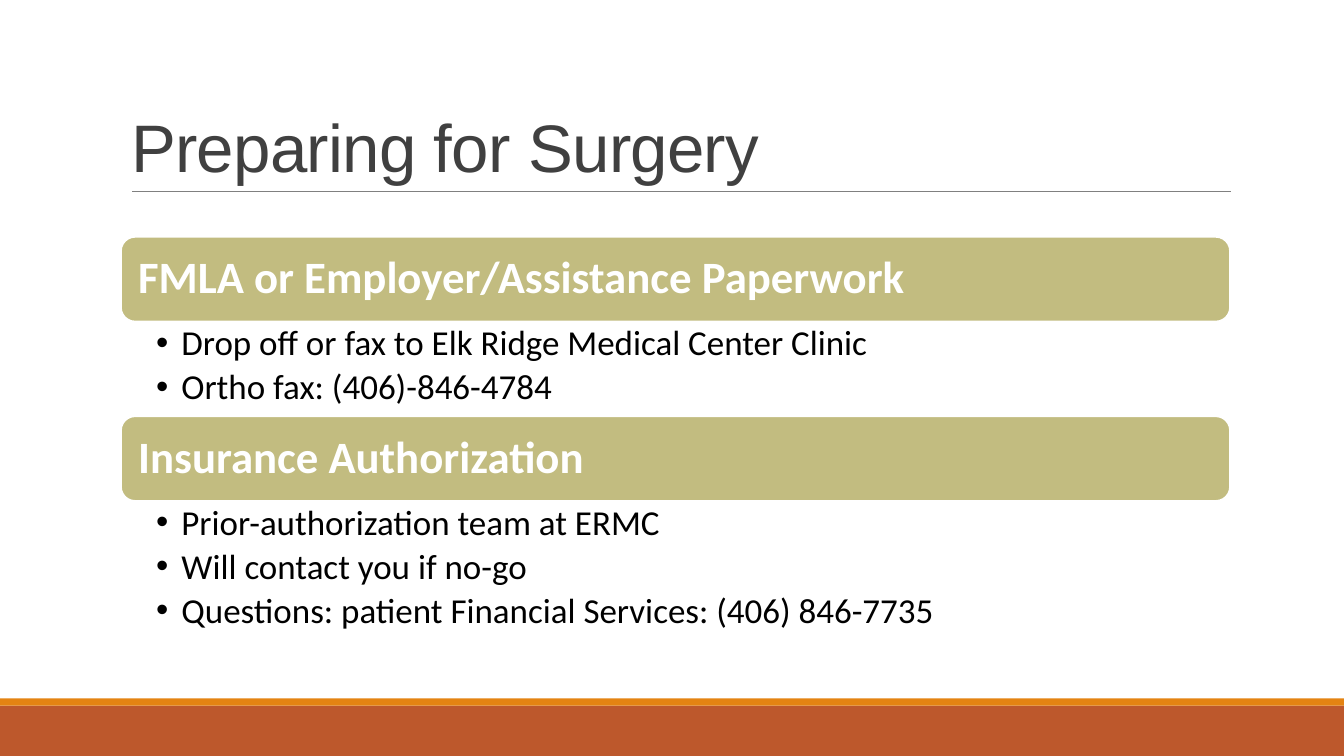
from dataclasses import dataclass
from lxml.etree import SubElement
from pptx import Presentation
from pptx.dml.color import RGBColor
from pptx.enum.shapes import MSO_CONNECTOR, MSO_SHAPE
from pptx.enum.text import MSO_ANCHOR, MSO_AUTO_SIZE, PP_ALIGN
from pptx.oxml.ns import qn
from pptx.util import Inches, Pt


@dataclass(frozen=True)
class Theme:
    rust: str = "BD582C"
    amber: str = "E48312"
    gray: str = "808080"
    ink: str = "404040"
    sand: str = "C2BC80"
    white: str = "FFFFFF"
    black: str = "000000"
    head: str = "Arial"
    body: str = "Calibri"
    big: int = 48
    mid: int = 32
    small: int = 25


THEME = Theme()
LEFT, WIDTH = 1.2, 11
BAR, ROW = 0.84, 0.47  # heights of a heading bar and a bullet row

TOPICS = [
    ("FMLA or Employer/Assistance Paperwork", [
        "Drop off or fax to Elk Ridge Medical Center Clinic",
        "Ortho fax: (406)-846-4784"]),
    ("Insurance Authorization", [
        "Prior-authorization team at ERMC",
        "Will contact you if no-go",
        "Questions: patient Financial Services: (406) 846-7735"]),
]


def apply(item, values):
    for name, value in values.items():
        setattr(item, name, value)


def style(para, name, size, color, bold=False):
    apply(para.font, {"name": name, "size": Pt(size), "bold": bold})
    para.font.color.rgb = RGBColor.from_string(color)


def setup(frame, anchor, insets):
    sides = ("margin_left", "margin_top", "margin_right", "margin_bottom")
    apply(frame, {"word_wrap": True, "auto_size": MSO_AUTO_SIZE.NONE,
                  "vertical_anchor": anchor})
    apply(frame, dict(zip(sides, map(Inches, insets))))


def block(slide, kind, box, fill, edge=None):
    shape = slide.shapes.add_shape(kind, *map(Inches, box))
    shape.shadow.inherit = False
    shape.fill.solid()
    shape.fill.fore_color.rgb = RGBColor.from_string(fill)
    if edge:
        shape.line.color.rgb = RGBColor.from_string(edge)
        shape.line.width = Pt(1.25)
    else:
        shape.line.fill.background()
    return shape


def rule(slide, left, right, top):
    line = slide.shapes.add_connector(
        MSO_CONNECTOR.STRAIGHT, *map(Inches, (left, top, right, top)))
    line.line.color.rgb = RGBColor.from_string(THEME.gray)
    line.line.width = Pt(0.5)
    SubElement(line.element.spPr, qn("a:effectLst"))


def title(slide, text):
    shape = slide.shapes.title
    places = ("left", "top", "width", "height")
    apply(shape, dict(zip(places, map(Inches, (LEFT, 0.31, WIDTH, 1.59)))))
    setup(shape.text_frame, MSO_ANCHOR.BOTTOM, (0.1, 0.05, 0.1, 0.05))
    para = shape.text_frame.paragraphs[0]
    run = para.add_run()
    run.text = text
    apply(para, {"alignment": PP_ALIGN.LEFT, "line_spacing": 0.85})
    style(run, THEME.head, THEME.big, THEME.ink)
    run.font._element.set("spc", "-50")


def heading(slide, text, top):
    bar = block(slide, MSO_SHAPE.ROUNDED_RECTANGLE,
                (LEFT, top, WIDTH, BAR), THEME.sand, THEME.white)
    setup(bar.text_frame, MSO_ANCHOR.MIDDLE, (0.13,) * 4)
    para = bar.text_frame.paragraphs[0]
    para.text = text
    apply(para, {"alignment": PP_ALIGN.LEFT, "line_spacing": 0.9})
    style(para, THEME.body, THEME.mid, THEME.white, True)


def bullets(slide, items, top):
    box = slide.shapes.add_textbox(
        *map(Inches, (LEFT, top, WIDTH, ROW * len(items))))
    frame = box.text_frame
    setup(frame, MSO_ANCHOR.TOP, (0.35, 0.04, 0.25, 0.04))
    for spot, text in enumerate(items):
        para = frame.add_paragraph() if spot else frame.paragraphs[0]
        para.text = text
        apply(para, {"level": 1, "line_spacing": 0.9, "space_after": Pt(4.4)})
        props = para._p.get_or_add_pPr()
        props.set("marL", str(Inches(0.25)))
        props.set("indent", str(Inches(-0.25)))
        SubElement(props, qn("a:buFont"), typeface="Arial")
        SubElement(props, qn("a:buChar"), char="•")
        style(para, THEME.body, THEME.small, THEME.black)


def main():
    deck = Presentation()
    apply(deck, {"slide_width": Inches(13.33), "slide_height": Inches(7.5)})
    slide = deck.slides.add_slide(deck.slide_layouts[5])

    # Footer bands and title rule
    block(slide, MSO_SHAPE.RECTANGLE, (0, 7, 13.33, 0.5), THEME.rust)
    block(slide, MSO_SHAPE.RECTANGLE, (0, 6.93, 13.33, 0.07), THEME.amber)
    rule(slide, 1.31, 12.21, 1.9)
    title(slide, "Preparing for Surgery")

    # Topics stacked without gaps
    top = 2.35
    for name, items in TOPICS:
        heading(slide, name, top)
        bullets(slide, items, top + BAR)
        top += BAR + ROW * len(items)

    deck.save("out.pptx")


if __name__ == "__main__":
    main()
